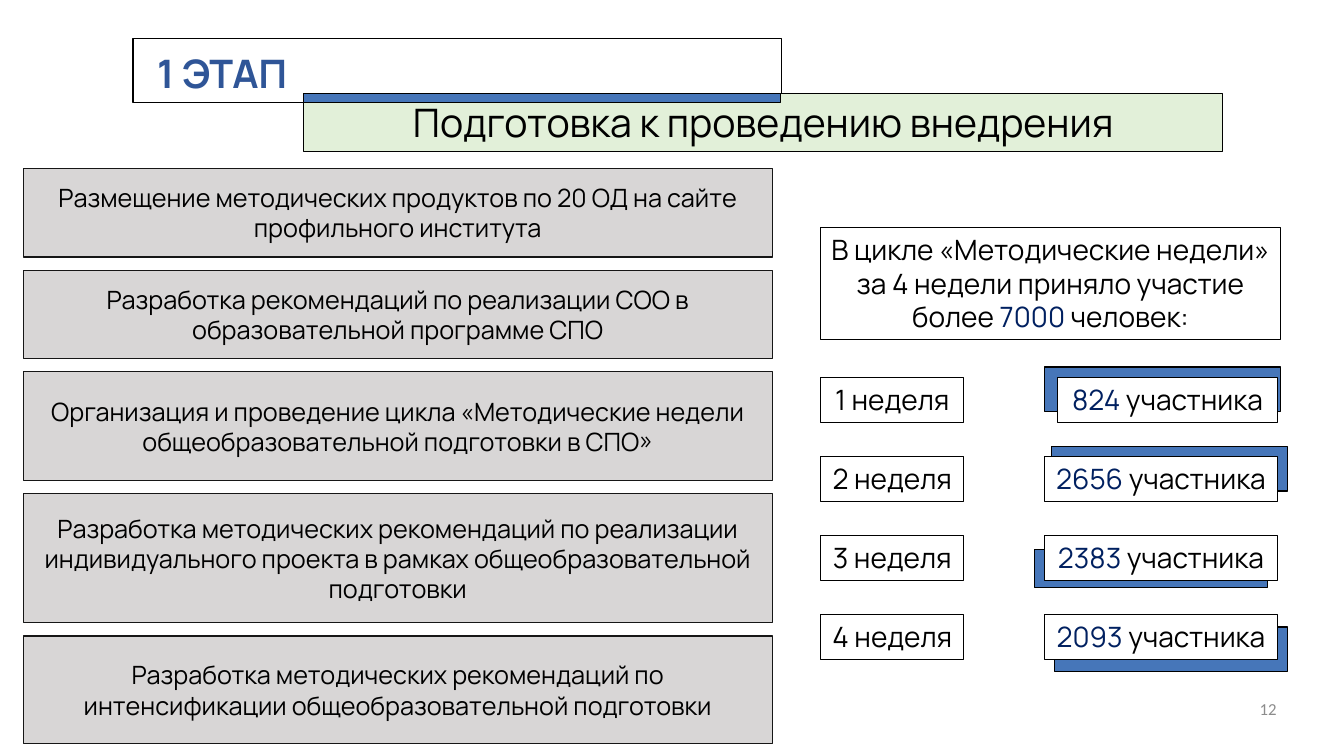
from dataclasses import dataclass

from pptx import Presentation
from pptx.dml.color import RGBColor
from pptx.enum.shapes import MSO_SHAPE as Shape
from pptx.enum.text import MSO_ANCHOR as Anchor, MSO_AUTO_SIZE as AutoSize, PP_ALIGN as Align
from pptx.util import Inches, Pt


@dataclass(frozen=True)
class Theme:
    font: str = "Manrope"
    number_font: str = "Calibri"
    black: str = "000000"
    white: str = "FFFFFF"
    blue: str = "4676B9"
    navy: str = "002060"
    heading: str = "2F5597"
    green: str = "E2F0D9"
    grey: str = "D8D6D6"
    grey_line: str = "161616"
    muted: str = "8C8C8C"
    title_size: int = 28
    count_size: int = 20
    task_size: int = 18
    number_size: int = 12
    thin: float = 0.75
    thick: float = 1


THEME = Theme()

TASKS = [
    ("Размещение методических продуктов по 20 ОД на сайте профильного института", 0.88),
    ("Разработка рекомендаций по реализации СОО в образовательной программе СПО", 0.88),
    ("Организация и проведение цикла «Методические недели общеобразовательной подготовки в СПО»", 1.08),
    ("Разработка методических рекомендаций по реализации индивидуального проекта "
     "в рамках общеобразовательной подготовки", 1.28),
    ("Разработка методических рекомендаций по интенсификации общеобразовательной подготовки", 1.07),
]
TASK_TOP, TASK_GAP = 1.67, 0.13

WEEKS = [
    ("824", 10.49, (10.36, 3.64, 2.34, 0.44)),
    ("2656", 10.36, (10.43, 4.43, 2.34, 0.44)),
    ("2383", 10.36, (10.26, 5.45, 2.31, 0.38)),
    ("2093", 10.36, (10.46, 6.22, 2.31, 0.44)),
]
WEEK_TOP, WEEK_BOTTOM, WEEK_HEIGHT = 3.75, 6.1, 0.44
WEEK_STEP = (WEEK_BOTTOM - WEEK_TOP) / (len(WEEKS) - 1)
COUNT_RIGHT = 12.67


def rgb(color):
    return RGBColor.from_string(color)


def write(box, spans, size, align=Align.CENTER, anchor=Anchor.TOP, font=THEME.font, bold=False):
    frame = box.text_frame
    frame.word_wrap = True
    frame.vertical_anchor = anchor
    para = frame.paragraphs[0]
    para.alignment = align
    para.font.name = font
    para.font.size = Pt(size)
    para.font.bold = bold
    for text, color in spans:
        span = para.add_run()
        span.text = text
        span.font.color.rgb = rgb(color)
    return frame


def add_box(page, area, fill=None, line=THEME.black, weight=THEME.thin):
    box = page.shapes.add_shape(Shape.RECTANGLE, *map(Inches, area))
    box.shadow.inherit = False
    if fill:
        box.fill.solid()
        box.fill.fore_color.rgb = rgb(fill)
    else:
        box.fill.background()
    box.line.color.rgb = rgb(line)
    box.line.width = Pt(weight)
    return box


def add_label(page, area, spans, size=THEME.count_size, fill=None):
    frame = write(add_box(page, area, fill), spans, size)
    frame.auto_size = AutoSize.SHAPE_TO_FIT_TEXT


def add_text(page, area, text, color, size, **style):
    box = page.shapes.add_textbox(*map(Inches, area))
    write(box, [(text, color)], size, **style)


def add_task(page, top, height, text):
    box = add_box(page, (0.23, top, 7.43, height), THEME.grey, THEME.grey_line)
    frame = write(box, [(text, THEME.black)], THEME.task_size, anchor=Anchor.MIDDLE)
    frame.margin_top = frame.margin_bottom = Inches(0.1)


def add_heading(page):
    add_text(page, (1.46, 0.44, 6.88, 0.57), "1 ЭТАП", THEME.heading, THEME.title_size,
             align=Align.LEFT, bold=True)
    add_box(page, (1.32, 0.38, 6.43, 0.64), weight=THEME.thick)
    add_label(page, (3.01, 0.93, 9.12, 0.57),
              [("Подготовка к проведению внедрения", THEME.black)], THEME.title_size, THEME.green)
    add_box(page, (3.01, 0.93, 4.73, 0.09), THEME.blue, weight=THEME.thick)


def add_tasks(page):
    top = TASK_TOP
    for text, height in TASKS:
        add_task(page, top, height, text)
        top += height + TASK_GAP


def add_weeks(page):
    add_label(page, (8.14, 2.26, 4.56, 1.11), [
        ("В цикле «Методические недели» за 4 недели приняло участие более ", THEME.black),
        ("7000", THEME.navy),
        (" человек:", THEME.black),
    ])
    for index, (count, left, backing) in enumerate(WEEKS):
        top = WEEK_TOP + index * WEEK_STEP
        add_box(page, backing, THEME.blue, weight=THEME.thick)
        add_label(page, (8.14, top, 1.42, WEEK_HEIGHT), [(f"{index + 1} неделя", THEME.black)])
        add_label(page, (left, top, COUNT_RIGHT - left, WEEK_HEIGHT),
                  [(count, THEME.navy), (" участника", THEME.black)], fill=THEME.white)


def main():
    deck = Presentation()
    deck.slide_width = Inches(13.33)
    deck.slide_height = Inches(7.5)
    page = deck.slides.add_slide(deck.slide_layouts[6])
    add_heading(page)
    add_tasks(page)
    add_weeks(page)
    add_text(page, (9.76, 6.83, 3, 0.4), "12", THEME.muted, THEME.number_size,
             align=Align.RIGHT, anchor=Anchor.MIDDLE, font=THEME.number_font)
    deck.save("out.pptx")


if __name__ == "__main__":
    main()
